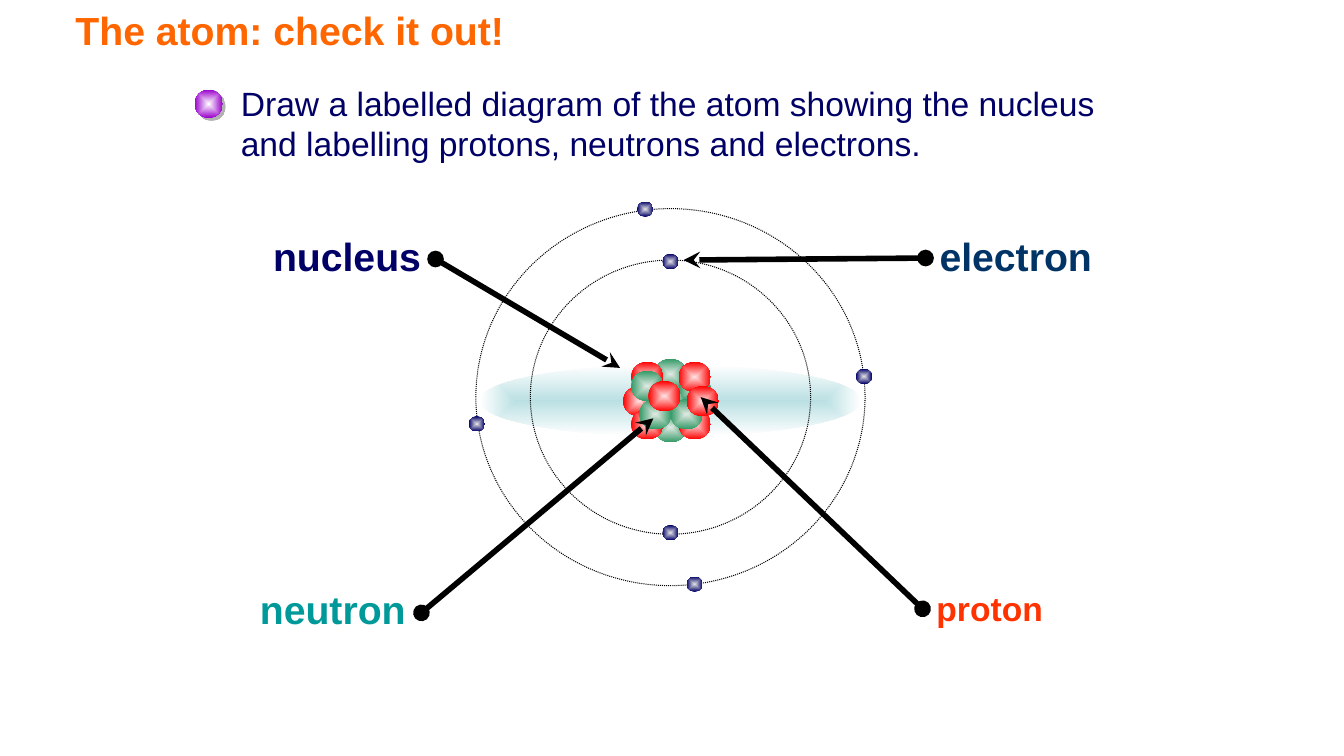
from lxml import etree
from pptx import Presentation
from pptx.dml.color import RGBColor
from pptx.enum.dml import MSO_LINE
from pptx.enum.shapes import MSO_CONNECTOR, MSO_SHAPE
from pptx.enum.text import MSO_ANCHOR
from pptx.oxml.ns import qn
from pptx.util import Inches, Pt

OVAL = MSO_SHAPE.OVAL
STRAIGHT = MSO_CONNECTOR.STRAIGHT
DOTTED = MSO_LINE.ROUND_DOT
TOP, MIDDLE = MSO_ANCHOR.TOP, MSO_ANCHOR.MIDDLE

BLACK = RGBColor(0x00, 0x00, 0x00)
WHITE = RGBColor(0xFF, 0xFF, 0xFF)
ORANGE = RGBColor(0xFF, 0x66, 0x00)
NAVY = RGBColor(0x01, 0x00, 0x66)
TEAL = RGBColor(0x00, 0x99, 0x99)
SCARLET = RGBColor(0xFF, 0x33, 0x00)
DARK_BLUE = RGBColor(0x00, 0x33, 0x66)

# Gradients as (centre, edge)
GLOW = (RGBColor(0xBB, 0xE0, 0xE3), WHITE)
ELECTRON = (RGBColor(0xDE, 0xDE, 0xE2), NAVY)
NEUTRON = (RGBColor(0xDF, 0xE9, 0xE2), RGBColor(0x33, 0x99, 0x66))
PROTON = (RGBColor(0xFF, 0xDE, 0xDE), RGBColor(0xFF, 0x00, 0x00))
BULLET = (WHITE, RGBColor(0x99, 0x00, 0xCC))

# Left and top of each particle, from back to front
ELECTRONS = [(6.57, 2.52), (6.57, 5.21), (6.32, 2.0),
             (4.65, 4.13), (6.81, 5.72), (8.49, 3.66)]
NUCLEONS = [
    (NEUTRON, 6.49, 3.56), (PROTON, 6.18, 3.83), (NEUTRON, 6.49, 3.83),
    (PROTON, 6.26, 3.59), (NEUTRON, 6.26, 3.68), (NEUTRON, 6.49, 4.09),
    (PROTON, 6.26, 4.06), (PROTON, 6.73, 4.06), (NEUTRON, 6.65, 3.96),
    (NEUTRON, 6.73, 3.68), (PROTON, 6.73, 3.59), (NEUTRON, 6.34, 3.96),
    (PROTON, 6.43, 3.78), (PROTON, 6.81, 3.83),
]

# Text, box, size, colour, arrow start, arrow end
LABELS = [
    ("nucleus", (2.61, 2.26, 1.79, 0.57), 28, NAVY, (4.32, 2.57), (6.15, 3.65)),
    ("neutron", (2.48, 5.76, 1.74, 0.57), 28, TEAL, (4.18, 6.08), (6.48, 4.15)),
    ("proton", (9.19, 5.78, 1.3, 0.5), 24, SCARLET, (9.15, 6.04), (6.95, 3.94)),
    ("electron", (9.22, 2.26, 1.73, 0.57), 28, DARK_BLUE, (9.18, 2.56), (6.78, 2.58)),
]


def add_oval(slide, box):
    oval = slide.shapes.add_shape(OVAL, *map(Inches, box))
    oval.shadow.inherit = False
    return oval


def add_ball(slide, box, gradient):
    """Oval shaded from its centre to its edge."""
    ball = add_oval(slide, box)
    ball.line.fill.background()
    ball.fill.gradient()
    for stop, color in zip(ball.fill.gradient_stops, gradient):
        stop.color.rgb = color
    grad_fill = ball.element.spPr.find(qn("a:gradFill"))
    linear = grad_fill.find(qn("a:lin"))
    radial = etree.Element(qn("a:path"), {"path": "shape"})
    etree.SubElement(radial, qn("a:fillToRect"),
                     dict.fromkeys("ltrb", "50000"))
    grad_fill.replace(linear, radial)
    return ball


def add_orbit(slide, box):
    orbit = add_oval(slide, box)
    orbit.fill.background()
    orbit.line.color.rgb = BLACK
    orbit.line.width = Pt(0.75)
    orbit.line.dash_style = DOTTED


def add_hard_shadow(ball):
    effects = ball.element.spPr.find(qn("a:effectLst"))
    shadow = etree.SubElement(effects, qn("a:outerShdw"), {
        "blurRad": "0", "dist": str(Pt(2.8)), "dir": "2700000",
        "algn": "ctr", "rotWithShape": "0"})
    etree.SubElement(shadow, qn("a:srgbClr"), {"val": "B2B2B2"})


def add_text(slide, text, box, size, color, bold=True, anchor=TOP):
    frame = slide.shapes.add_textbox(*map(Inches, box)).text_frame
    frame.word_wrap = True
    frame.vertical_anchor = anchor
    paragraph = frame.paragraphs[0]
    paragraph.text = text
    font = paragraph.font
    font.name, font.size, font.bold = "Arial", Pt(size), bold
    font.color.rgb = color


def add_pointer(slide, start, end):
    pointer = slide.shapes.add_connector(STRAIGHT, *map(Inches, start + end))
    pointer.line.color.rgb = BLACK
    pointer.line.width = Pt(4)
    properties = pointer.element.spPr
    outline = properties.find(qn("a:ln"))
    etree.SubElement(outline, qn("a:headEnd"), {"type": "oval"})
    etree.SubElement(outline, qn("a:tailEnd"), {"type": "stealth"})
    etree.SubElement(properties, qn("a:effectLst"))


def main():
    presentation = Presentation()
    presentation.slide_width = Inches(13.33)
    presentation.slide_height = Inches(7.5)
    slide = presentation.slides.add_slide(presentation.slide_layouts[6])

    # Atom: glow, orbits, electrons and nucleus
    add_ball(slide, (4.76, 3.62, 3.78, 0.71), GLOW)
    add_orbit(slide, (5.26, 2.58, 2.78, 2.72))
    add_orbit(slide, (4.72, 2.07, 3.86, 3.74))
    for left, top in ELECTRONS:
        add_ball(slide, (left, top, 0.16, 0.15), ELECTRON)
    for gradient, left, top in NUCLEONS:
        add_ball(slide, (left, top, 0.32, 0.3), gradient)

    # Title and task
    add_text(slide, "The atom: check it out!", (0.65, 0, 10.85, 0.6), 28,
             ORANGE, anchor=MIDDLE)
    add_text(slide, "Draw a labelled diagram of the atom showing the nucleus "
             "and labelling protons, neutrons and electrons.",
             (2.29, 0.77, 8.74, 0.91), 24, NAVY, bold=False)
    add_hard_shadow(add_ball(slide, (1.93, 0.89, 0.28, 0.28), BULLET))

    # Labels with their pointers
    for text, box, size, color, start, end in LABELS:
        add_text(slide, text, box, size, color)
        add_pointer(slide, start, end)

    presentation.save("out.pptx")


if __name__ == "__main__":
    main()
